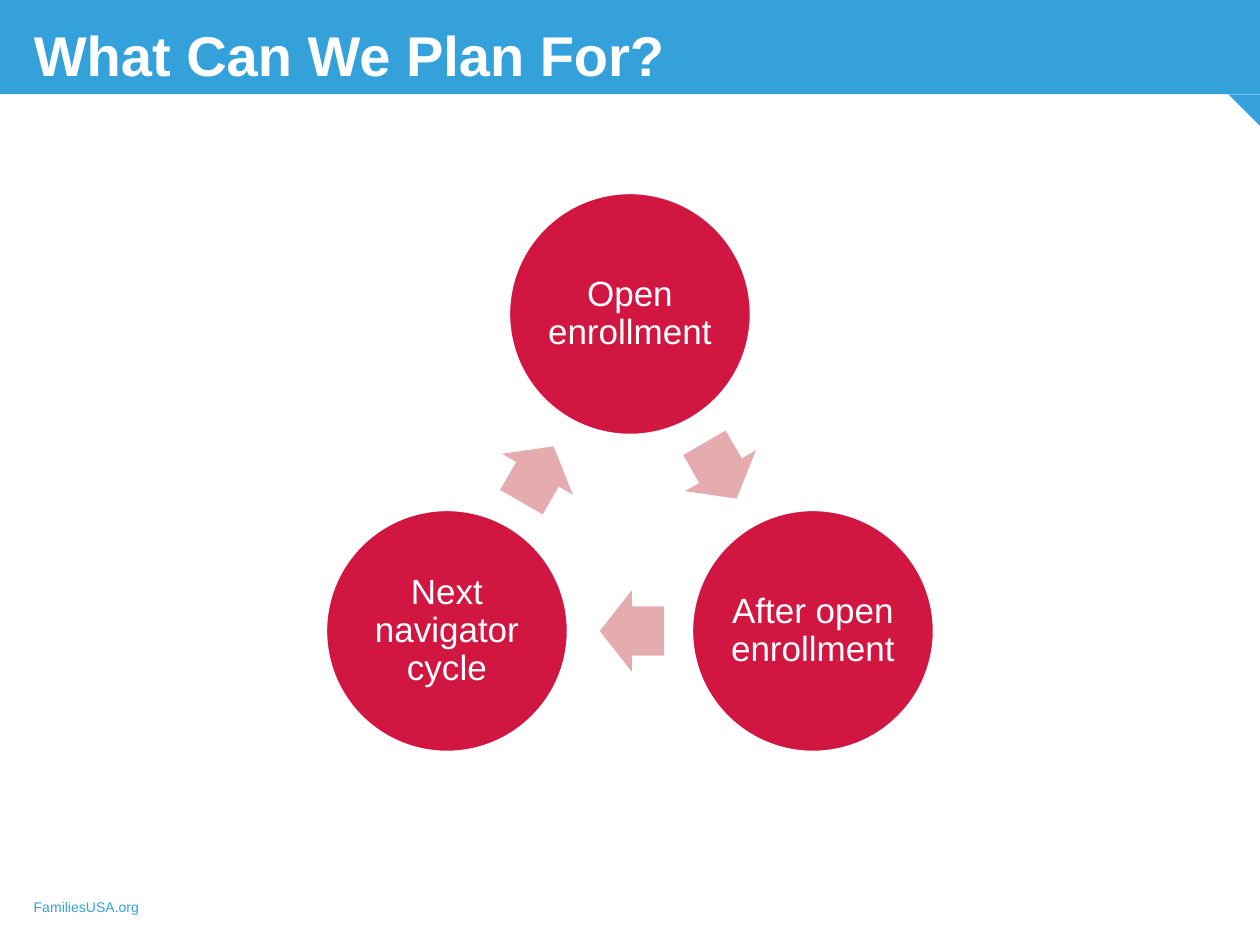
import math

from pptx import Presentation
from pptx.dml.color import RGBColor
from pptx.enum import shapes, text
from pptx.util import Cm, Pt

TITLE = "What Can We Plan For?"
FOOTER = "FamiliesUSA.org"
STAGES = ["Open enrollment", "After open enrollment", "Next navigator cycle"]

BLUE, RED, PINK, WHITE = "35A1DA", "D11741", "E5ACB0", "FFFFFF"
SLIDE_W, SLIDE_H = 25.4, 19.05
BAR_H, FOLD = 1.9, 0.64
MARGIN = 0.43
CENTER_X, CENTER_Y, RADIUS = 12.7, 10.59, 4.26
CIRCLE = 4.9
ARROW_W, ARROW_H, ARROW_SETBACK = 1.3, 1.65, 0.04


def rgb(color):
    return RGBColor.from_string(color)


def add_shape(s, kind, x, y, w, h, fill, line=None, rotation=0):
    sp = s.shapes.add_shape(kind, Cm(x), Cm(y), Cm(w), Cm(h))
    sp.shadow.inherit = False
    sp.rotation = rotation
    sp.fill.solid()
    sp.fill.fore_color.rgb = rgb(fill)
    if line:
        sp.line.color.rgb = rgb(line)
        sp.line.width = Pt(2)
    else:
        sp.line.fill.background()
    return sp


def write(sp, content, size, color=WHITE, bold=False, align=text.PP_ALIGN.LEFT,
          anchor=text.MSO_ANCHOR.TOP, spacing=1.0, inset=None):
    tf = sp.text_frame
    tf.word_wrap = True
    tf.auto_size = text.MSO_AUTO_SIZE.NONE
    tf.vertical_anchor = anchor
    if inset is not None:
        tf.margin_left = tf.margin_right = tf.margin_top = tf.margin_bottom = Cm(inset)
    p = tf.paragraphs[0]
    p.alignment = align
    p.line_spacing = spacing
    r = p.add_run()
    r.text = content
    r.font.name = "Arial"
    r.font.size = Pt(size)
    r.font.bold = bold
    r.font.color.rgb = rgb(color)


def stage_center(i):
    """Center of stage i, clockwise from the top of the cycle."""
    angle = math.radians(360 / len(STAGES) * i - 90)
    return CENTER_X + RADIUS * math.cos(angle), CENTER_Y + RADIUS * math.sin(angle)


def add_stage(s, i):
    x, y = stage_center(i)
    circle = add_shape(s, shapes.MSO_SHAPE.OVAL, x - CIRCLE / 2, y - CIRCLE / 2,
                       CIRCLE, CIRCLE, RED, line=WHITE)
    write(circle, STAGES[i], 20, align=text.PP_ALIGN.CENTER,
          anchor=text.MSO_ANCHOR.MIDDLE, spacing=0.9, inset=0.07)


def add_arrow(s, i):
    """Arrow from stage i to the next one, slightly before the midpoint."""
    x1, y1 = stage_center(i)
    x2, y2 = stage_center(i + 1)
    angle = math.atan2(y2 - y1, x2 - x1)
    x = (x1 + x2) / 2 - ARROW_SETBACK * math.cos(angle)
    y = (y1 + y2) / 2 - ARROW_SETBACK * math.sin(angle)
    arrow = add_shape(s, shapes.MSO_SHAPE.RIGHT_ARROW, x - ARROW_W / 2, y - ARROW_H / 2,
                      ARROW_W, ARROW_H, PINK, rotation=math.degrees(angle) % 360)
    arrow.adjustments[0] = 0.6
    arrow.adjustments[1] = 0.5


def main():
    prs = Presentation()
    prs.slide_width, prs.slide_height = Cm(SLIDE_W), Cm(SLIDE_H)
    s = prs.slides.add_slide(prs.slide_layouts[5])

    add_shape(s, shapes.MSO_SHAPE.RECTANGLE, 0, 0, SLIDE_W, BAR_H, BLUE)
    add_shape(s, shapes.MSO_SHAPE.RIGHT_TRIANGLE, SLIDE_W - FOLD, BAR_H, FOLD, FOLD,
              BLUE, rotation=180)
    footer = s.shapes.add_textbox(Cm(MARGIN), Cm(17.98), Cm(8.7), Cm(0.6))
    write(footer, FOOTER, 8, color=BLUE)

    title = s.shapes.title
    title.left, title.top = Cm(MARGIN), Cm(0.28)
    title.width, title.height = Cm(24.55), Cm(1.62)
    write(title, TITLE, 32, bold=True)
    title.element.getparent().append(title.element)  # in front of the bar

    for i in range(len(STAGES)):
        add_stage(s, i)
        add_arrow(s, i)

    prs.save("out.pptx")


if __name__ == "__main__":
    main()
